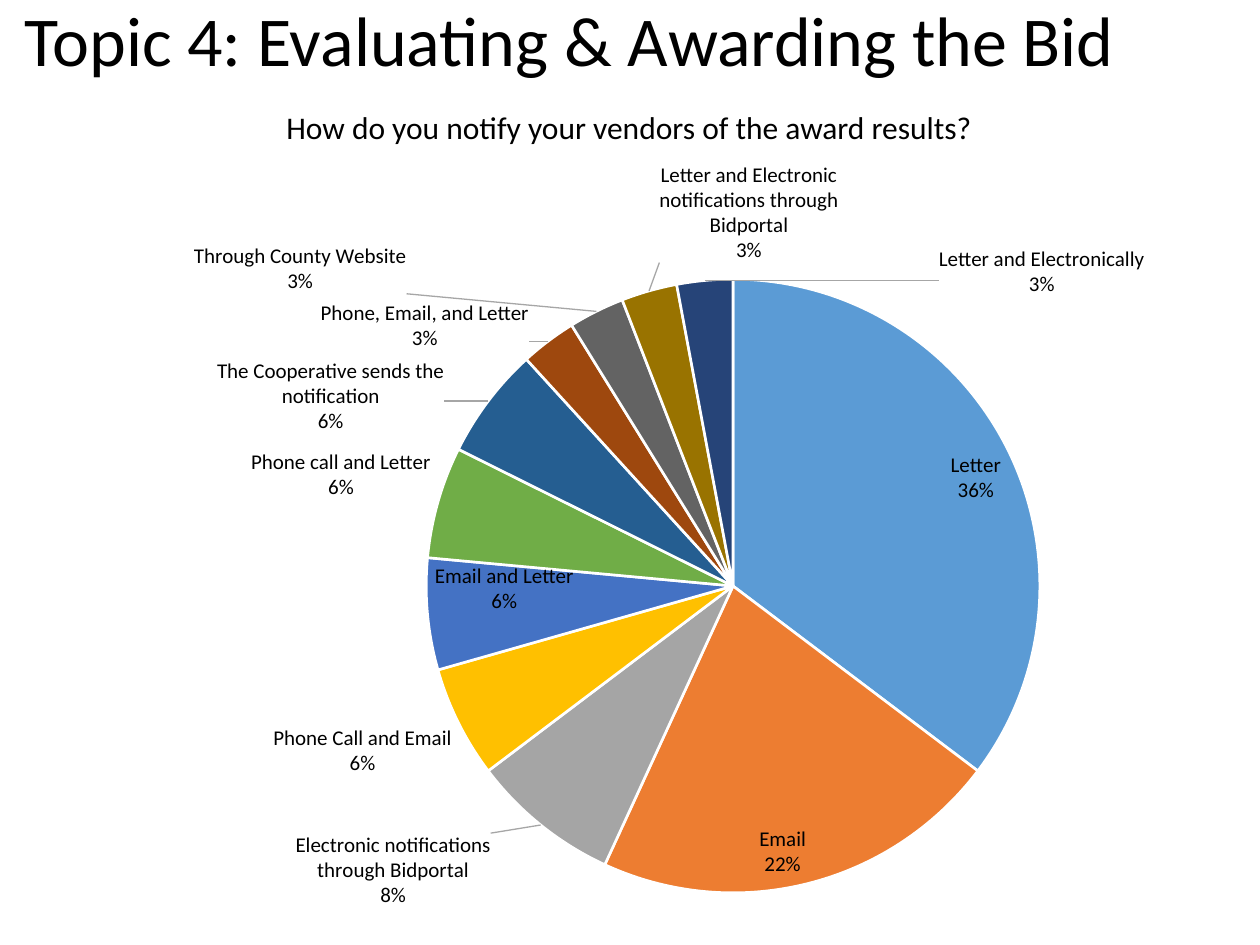
from lxml import etree
from pptx import Presentation
from pptx import util as u
from pptx.chart.data import CategoryChartData
from pptx.dml.color import RGBColor
from pptx.enum import chart as charts, text
from pptx.oxml import parse_xml
from pptx.oxml.ns import nsdecls, qn

OUTSIDE = charts.XL_LABEL_POSITION.OUTSIDE_END
INSIDE = charts.XL_LABEL_POSITION.INSIDE_END

ANSWERS = [
    ("Letter", 36, "5B9BD5", INSIDE, None),
    ("Email", 22, "ED7D31", INSIDE, None),
    ("Electronic notifications through Bidportal", 8, "A5A5A5", OUTSIDE, (-3.7, 0.3)),
    ("Phone Call and Email", 6, "FFC000", OUTSIDE, None),
    ("Email and Letter", 6, "4472C4", INSIDE, None),
    ("Phone call and Letter", 6, "70AD47", OUTSIDE, None),
    ("The Cooperative sends the notification", 6, "255E91", OUTSIDE, (-3.1, 4.7)),
    ("Phone, Email, and Letter", 3, "9E480E", OUTSIDE, (-1.2, 1.9)),
    ("Through County Website", 3, "636363", OUTSIDE, (-15.2, -1.4)),
    ("Letter and Electronic notifications through Bidportal", 3, "997300", OUTSIDE, (15.6, -2.7)),
    ("Letter and Electronically", 3, "264478", OUTSIDE, (35.9, 3)),
]


def color(value):
    return RGBColor.from_string(value)


def manual_layout(**settings):
    items = "".join(f'<c:{name} val="{value}"/>' for name, value in settings.items())
    return parse_xml(f'<c:layout {nsdecls("c")}><c:manualLayout>{items}</c:manualLayout></c:layout>')


class SlideBuilder:
    font_name = "Calibri"
    ink = "000000"
    paper = "FFFFFF"
    leader = "A6A6A6"
    label_size = 12
    percent_format = '0"%"'

    def __init__(self, presentation):
        self.slide = presentation.slides.add_slide(presentation.slide_layouts[6])

    def style(self, font, size):
        font.name = self.font_name
        font.size = u.Pt(size)
        font.color.rgb = color(self.ink)

    def add_text(self, wording, left, top, width, height, size, alignment, spacing=1.0):
        shape = self.slide.shapes.add_textbox(u.Cm(left), u.Cm(top), u.Cm(width), u.Cm(height))
        shape.text_frame.word_wrap = True
        shape.text_frame.vertical_anchor = text.MSO_ANCHOR.TOP
        paragraph = shape.text_frame.paragraphs[0]
        paragraph.text = wording
        paragraph.alignment = alignment
        paragraph.line_spacing = spacing
        self.style(paragraph.font, size)

    def add_pie(self, answers, left, top, width, height):
        data = CategoryChartData()
        data.categories = [answer[0] for answer in answers]
        data.add_series("Series 1", [answer[1] for answer in answers])
        chart = self.slide.shapes.add_chart(
            charts.XL_CHART_TYPE.PIE, u.Cm(left), u.Cm(top), u.Cm(width), u.Cm(height), data
        ).chart
        chart.has_title = False
        chart.has_legend = False
        self.style(chart.font, 10)
        plot = chart.plots[0]
        plot.vary_by_categories = True
        self.place_pie(plot)
        series = plot.series[0]
        self.style(series.data_labels.font, self.label_size)
        series.data_labels.number_format = self.percent_format
        series.data_labels.number_format_is_linked = False
        for index, (_, _, fill, position, _) in enumerate(answers):
            point = series.points[index]
            point.format.fill.solid()
            point.format.fill.fore_color.rgb = color(fill)
            point.format.line.color.rgb = color(self.paper)
            point.format.line.width = u.Pt(1.5)
            point.data_label.position = position
            self.style(point.data_label.font, self.label_size)
        self.finish_labels(series.data_labels._element, [answer[4] for answer in answers])

    def place_pie(self, plot):
        plot_area = plot._element.getparent()
        for old in plot_area.findall(qn("c:layout")):
            plot_area.remove(old)
        plot_area.insert(0, manual_layout(
            layoutTarget="inner", xMode="edge", yMode="edge", x=0.33, y=0.15, w=0.5, h=0.79
        ))

    def finish_labels(self, labels, offsets):
        for label, offset in zip(labels.findall(qn("c:dLbl")), offsets):
            number_format = etree.Element(
                qn("c:numFmt"), formatCode=self.percent_format, sourceLinked="0"
            )
            label.insert(1, number_format)
            if offset:
                label.insert(1, manual_layout(x=offset[0] / 100, y=offset[1] / 100))
        for name in ("c:showVal", "c:showCatName"):
            for switch in labels.iter(qn(name)):
                switch.set("val", "1")
        for switch in list(labels.iter(qn("c:showBubbleSize"))):
            separator = etree.Element(qn("c:separator"))
            separator.text = "\n"
            switch.addnext(separator)
        labels.append(parse_xml(
            f'<c:leaderLines {nsdecls("c", "a")}><c:spPr><a:ln w="9525"><a:solidFill>'
            f'<a:srgbClr val="{self.leader}"/></a:solidFill></a:ln></c:spPr></c:leaderLines>'
        ))


def main():
    presentation = Presentation()
    presentation.slide_width = u.Cm(25.4)
    presentation.slide_height = u.Cm(19.05)
    builder = SlideBuilder(presentation)
    builder.add_pie(ANSWERS, 0.43, 3.15, 24.74, 15.9)
    builder.add_text("Topic 4: Evaluating & Awarding the Bid", 0.25, 0, 24.87, 2.06,
                     40, text.PP_ALIGN.LEFT, 0.9)
    builder.add_text("How do you notify your vendors of the award results?", 0.25, 2.06, 24.87, 1.02,
                     18, text.PP_ALIGN.CENTER)
    presentation.save("out.pptx")


if __name__ == "__main__":
    main()
